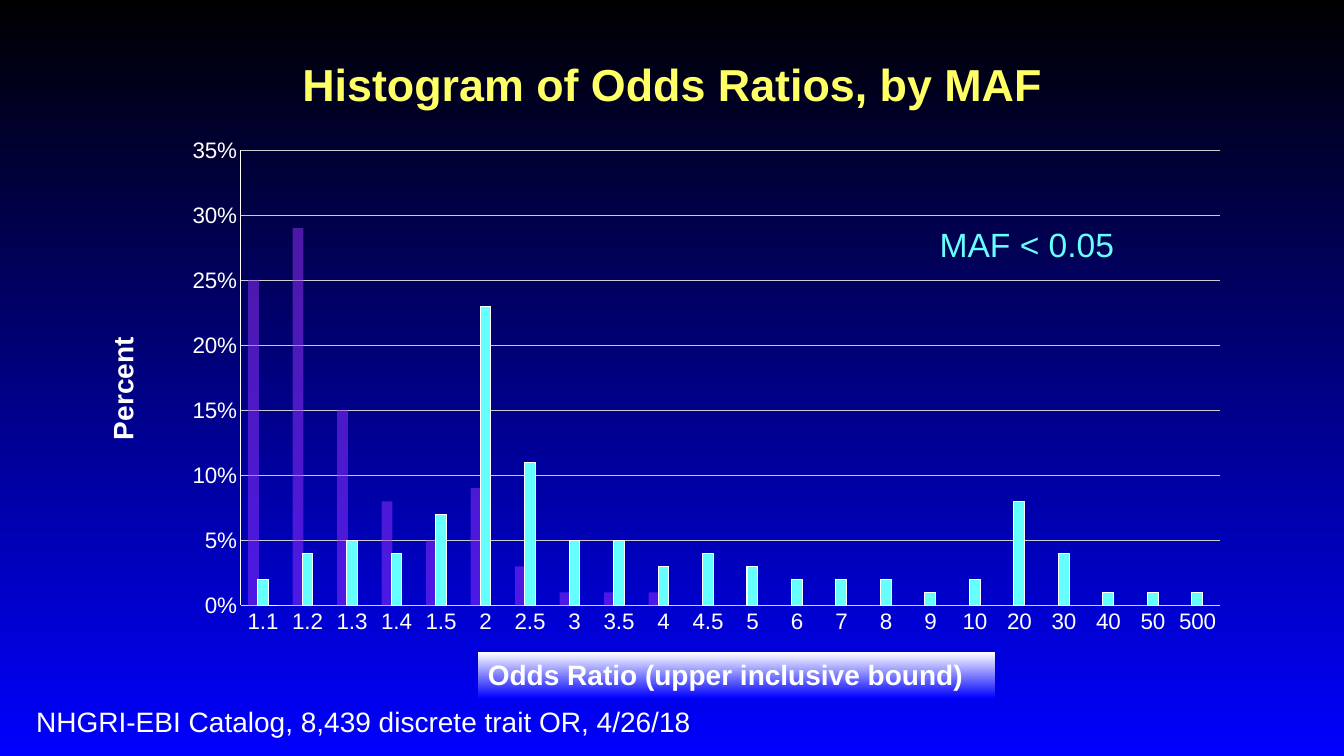
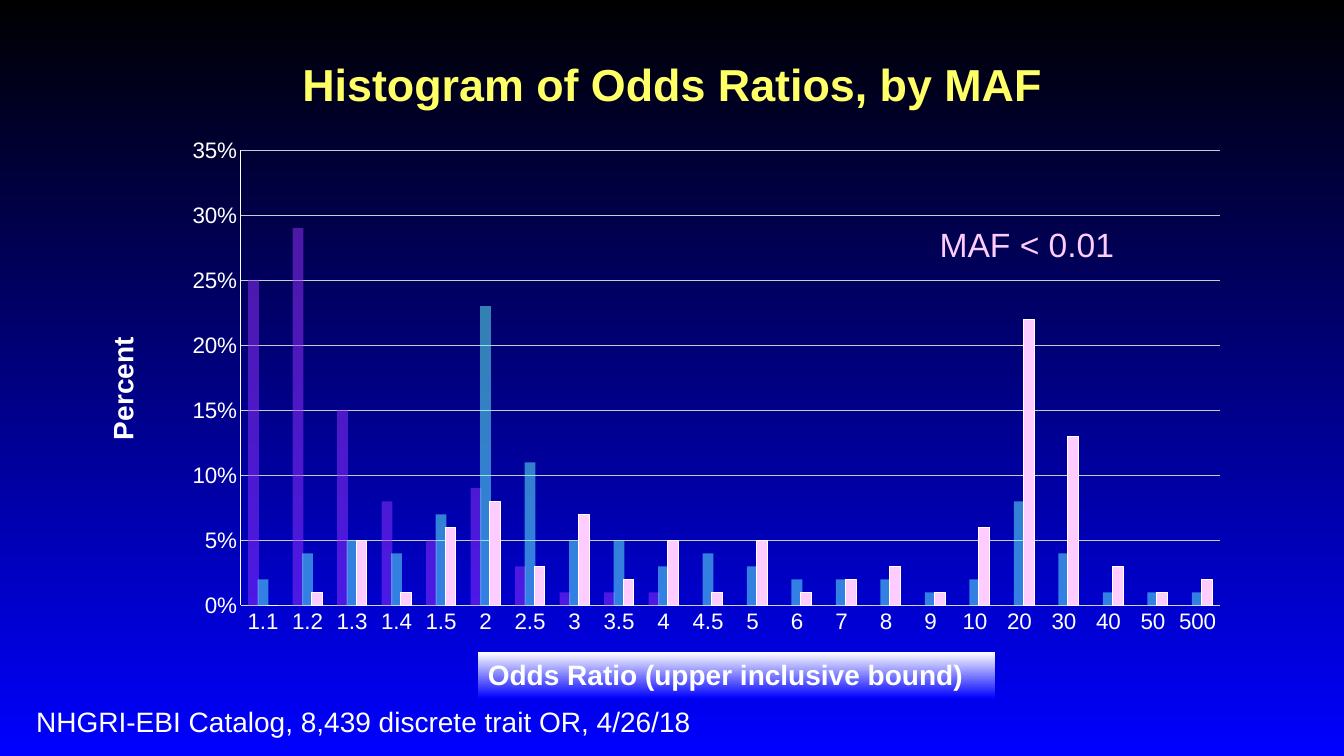
from lxml import etree
from pptx import Presentation
from pptx import util as u
from pptx.chart.data import CategoryChartData
from pptx.dml.color import RGBColor
from pptx.enum import chart as charts, dml, shapes, text
from pptx.oxml.ns import qn

COLOURS = {
    "black": "000000", "blue": "0000FF", "white": "FFFFFF", "yellow": "FFFF66",
    "purple": "9933FF", "cyan": "66FFFF", "rose": "FF99FF", "pink": "FFCCFF",
    "axis": "D9D9D9", "grid": "CCCCCC",
}
FONT = "Arial"
BOUNDS = ("1.1 1.2 1.3 1.4 1.5 2 2.5 3 3.5 4 4.5 5 6 7 8 9 "
          "10 20 30 40 50 500").split()
PLOT_AREA = {"x": 0.064, "y": 0.043, "w": 0.916, "h": 0.882}

COMMON = [0.25, 0.29, 0.15, 0.08, 0.05, 0.09, 0.03, 0.01, 0.01, 0.01] + [0] * 12
BELOW_5 = [0.02, 0.04, 0.05, 0.04, 0.07, 0.23, 0.11, 0.05, 0.05, 0.03, 0.04,
           0.03, 0.02, 0.02, 0.02, 0.01, 0.02, 0.08, 0.04, 0.01, 0.01, 0.01]
BELOW_1 = [0, 0.01, 0.05, 0.01, 0.06, 0.08, 0.03, 0.07, 0.02, 0.05, 0.01,
           0.05, 0.01, 0.02, 0.03, 0.01, 0.06, 0.22, 0.13, 0.03, 0.01, 0.02]
NO_VALUES = [0] + [None] * 21


def rgb(name):
    return RGBColor.from_string(COLOURS[name])


def shade_down(fill, top, bottom):
    """Fill with a gradient that runs from top to bottom."""
    fill.gradient()
    fill.gradient_angle = 270
    for stop, colour in zip(fill.gradient_stops, (top, bottom)):
        stop.color.rgb = rgb(colour)


def set_line(line, colour, width=0.75):
    line.color.rgb = rgb(colour)
    line.width = u.Pt(width)


def set_font(font, size, colour, bold=False):
    font.name, font.size, font.bold = FONT, u.Pt(size), bold
    font.color.rgb = rgb(colour)


class Histograms:
    def __init__(self):
        self.deck = Presentation()
        self.deck.slide_width = u.Inches(13.33)
        self.deck.slide_height = u.Inches(7.5)
        self.page = None

    def new_page(self):
        self.page = self.deck.slides.add_slide(self.deck.slide_layouts[6])
        shade_down(self.page.background.fill, "black", "blue")

    def set_words(self, box, words, size, colour, bold=False):
        """Put one unwrapped line of text in a box."""
        frame = box.text_frame
        frame.word_wrap = False
        frame.auto_size = text.MSO_AUTO_SIZE.SHAPE_TO_FIT_TEXT
        frame.vertical_anchor = text.MSO_ANCHOR.TOP
        para = frame.paragraphs[0]
        para.alignment = text.PP_ALIGN.LEFT
        span = para.add_run()
        span.text = words
        set_font(span.font, size, colour, bold)

    def label(self, place, words, size=20, colour="white", bold=False):
        box = self.page.shapes.add_textbox(*map(u.Inches, place))
        self.set_words(box, words, size, colour, bold)
        return box

    def title(self, words):
        box = self.label((1.55, 0.4, 10.24, 0.91), words, 32, "yellow", True)
        frame = box.text_frame
        frame.word_wrap = True
        frame.auto_size = text.MSO_AUTO_SIZE.NONE
        frame.vertical_anchor = text.MSO_ANCHOR.MIDDLE
        para = frame.paragraphs[0]
        para.alignment = text.PP_ALIGN.CENTER
        para.line_spacing = 0.95

    def band(self, place, words):
        box = self.page.shapes.add_shape(
            shapes.MSO_SHAPE.RECTANGLE, *map(u.Inches, place))
        box.shadow.inherit = False
        box.line.fill.background()
        shade_down(box.fill, "white", "blue")
        self.set_words(box, words, 20, "white", True)

    def chart(self, series):
        """Draw clustered columns from (values, colour, faded) triples."""
        data = CategoryChartData(number_format="0%")
        data.categories = BOUNDS
        for number, (values, _, _) in enumerate(series, 1):
            data.add_series(f"Series {number}", values)
        place = map(u.Inches, (1.71, 1.27, 10.6, 5.12))
        chart = self.page.shapes.add_chart(
            charts.XL_CHART_TYPE.COLUMN_CLUSTERED, *place, data).chart
        chart.has_legend = chart.has_title = False
        set_font(chart.font, 10, "black")
        self.fix_plot_area(chart)

        plot = chart.plots[0]
        plot.vary_by_categories = False
        plot.gap_width, plot.overlap = 134, 13
        nodes = chart.element.findall(f".//{qn('c:ser')}")
        for bars, node, (_, colour, faded) in zip(plot.series, nodes, series):
            self.colour_bars(bars, node, colour, faded)

        for axis, colour in ((chart.category_axis, "axis"),
                             (chart.value_axis, "white")):
            axis.major_tick_mark = axis.minor_tick_mark = charts.XL_TICK_MARK.NONE
            set_font(axis.tick_labels.font, 16, "white")
            set_line(axis.format.line, colour)
        percent = chart.value_axis
        percent.minimum_scale, percent.maximum_scale = 0, 0.35
        percent.major_unit = 0.05
        percent.tick_labels.number_format = "0%"
        percent.tick_labels.number_format_is_linked = False
        percent.has_major_gridlines = True
        grid = percent.major_gridlines.format.line
        set_line(grid, "grid", 0.25)
        grid.dash_style = dml.MSO_LINE.ROUND_DOT

    def colour_bars(self, bars, node, colour, faded):
        """Fill one series; a faded one is half transparent, with no outline."""
        bars.invert_if_negative = False
        bars.format.fill.solid()
        bars.format.fill.fore_color.rgb = rgb(colour)
        if faded:
            bars.format.line.fill.background()
            tone = node.find(f"{qn('c:spPr')}/{qn('a:solidFill')}/{qn('a:srgbClr')}")
            etree.SubElement(tone, qn("a:alpha"), val="50000")
        else:
            set_line(bars.format.line, "white")

    def fix_plot_area(self, chart):
        area = chart.element.find(f".//{qn('c:plotArea')}")
        for old in area.findall(qn("c:layout")):
            area.remove(old)
        layout = etree.Element(qn("c:layout"))
        area.insert(0, layout)
        manual = etree.SubElement(layout, qn("c:manualLayout"))
        settings = {"layoutTarget": "inner", "xMode": "edge", "yMode": "edge"}
        for tag, value in {**settings, **PLOT_AREA}.items():
            etree.SubElement(manual, qn(f"c:{tag}"), val=str(value))

    def histogram(self, series, group, colour):
        self.new_page()
        self.title("Histogram of Odds Ratios, by MAF")
        self.chart(series)
        self.label((0.6, 3.63, 1.23, 0.44), "Percent", bold=True).rotation = 270
        self.band((4.74, 6.47, 5.13, 0.46), "Odds Ratio (upper inclusive bound)")
        self.label((0.26, 6.94, 6.8, 0.44),
                   "NHGRI-EBI Catalog, 8,439 discrete trait OR, 4/26/18")
        self.label((9.22, 2.17, 1.95, 0.5), group, 24, colour)


def main():
    show = Histograms()
    common = (COMMON, "purple", True)
    show.histogram([common, (BELOW_5, "cyan", False), (NO_VALUES, "rose", False)],
                   "MAF < 0.05", "cyan")
    show.histogram([common, (BELOW_5, "cyan", True), (BELOW_1, "pink", False)],
                   "MAF < 0.01", "pink")
    show.deck.save("out.pptx")


if __name__ == "__main__":
    main()
